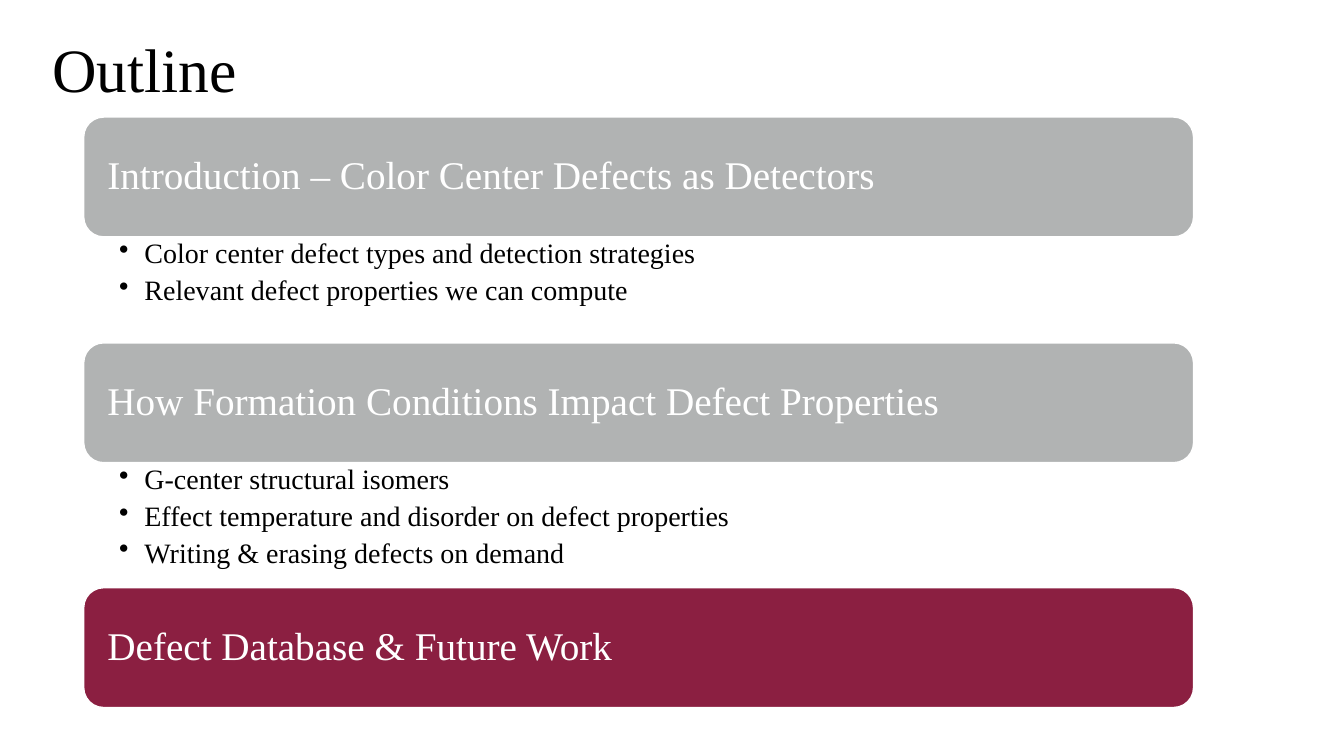
from lxml import etree
from pptx import Presentation
from pptx.dml.color import RGBColor
from pptx.enum.shapes import MSO_SHAPE
from pptx.enum.text import MSO_ANCHOR, PP_ALIGN
from pptx.oxml.ns import qn
from pptx.util import Cm, Pt

ROUNDED = MSO_SHAPE.ROUNDED_RECTANGLE
MIDDLE = MSO_ANCHOR.MIDDLE
TOP = MSO_ANCHOR.TOP
LEFT = PP_ALIGN.LEFT

BLACK = RGBColor(0x00, 0x00, 0x00)
WHITE = RGBColor(0xFF, 0xFF, 0xFF)
GREY = RGBColor(0xB1, 0xB3, 0xB3)
MAROON = RGBColor(0x8B, 0x1F, 0x41)
FONT = "Times New Roman"

BAR_LEFT = Cm(2.11)
BAR_WIDTH = Cm(27.97)
BAR_HEIGHT = Cm(3.02)

SECTIONS = [
    (Cm(2.95), GREY, "Introduction – Color Center Defects as Detectors", [
        "Color center defect types and detection strategies",
        "Relevant defect properties we can compute",
    ]),
    (Cm(8.64), GREY, "How Formation Conditions Impact Defect Properties", [
        "G-center structural isomers",
        "Effect temperature and disorder on defect properties",
        "Writing & erasing defects on demand",
    ]),
    (Cm(14.81), MAROON, "Defect Database & Future Work", []),
]


def set_frame(frame, anchor, left, top, right, bottom):
    frame.word_wrap = True
    frame.vertical_anchor = anchor
    frame.margin_left, frame.margin_top = left, top
    frame.margin_right, frame.margin_bottom = right, bottom


def write(para, text, size, color):
    para.alignment = LEFT
    para.line_spacing = 0.9
    span = para.add_run()
    span.text = text
    span.font.name = FONT
    span.font.size = Pt(size)
    span.font.color.rgb = color


def add_bullet(para):
    properties = para._p.get_or_add_pPr()
    properties.set("marL", str(Cm(0.64)))
    properties.set("indent", str(-Cm(0.64)))
    etree.SubElement(properties, qn("a:buChar")).set("char", "•")


def add_title(page, text):
    box = page.shapes.add_textbox(Cm(1.07), Cm(0), Cm(29.21), Cm(3.68))
    set_frame(box.text_frame, MIDDLE, Cm(0.25), Cm(0.13), Cm(0.25), Cm(0.13))
    write(box.text_frame.paragraphs[0], text, 44, BLACK)


def add_bar(page, top, color, heading):
    bar = page.shapes.add_shape(ROUNDED, BAR_LEFT, top, BAR_WIDTH, BAR_HEIGHT)
    bar.shadow.inherit = False
    bar.fill.solid()
    bar.fill.fore_color.rgb = color
    bar.line.color.rgb = WHITE
    bar.line.width = Pt(1)
    set_frame(bar.text_frame, MIDDLE, Cm(0.45), Cm(0.3), Cm(0.45), Cm(0.3))
    write(bar.text_frame.paragraphs[0], heading, 28, WHITE)


def add_topics(page, top, height, topics):
    box = page.shapes.add_textbox(BAR_LEFT, top, BAR_WIDTH, height)
    frame = box.text_frame
    set_frame(frame, TOP, Cm(0.89), Cm(0.07), Cm(0.4), Cm(0.07))
    for index, topic in enumerate(topics):
        para = frame.add_paragraph() if index else frame.paragraphs[0]
        write(para, topic, 20, BLACK)
        para.space_after = Pt(4.6)
        add_bullet(para)


def main():
    deck = Presentation()
    deck.slide_width = Cm(33.87)
    deck.slide_height = Cm(19.05)
    page = deck.slides.add_slide(deck.slide_layouts[6])
    add_title(page, "Outline")
    for index, (top, color, heading, topics) in enumerate(SECTIONS):
        add_bar(page, top, color, heading)
        if topics:
            topics_top = top + BAR_HEIGHT
            next_top = SECTIONS[index + 1][0]
            add_topics(page, topics_top, next_top - topics_top, topics)
    deck.save("out.pptx")


if __name__ == "__main__":
    main()
